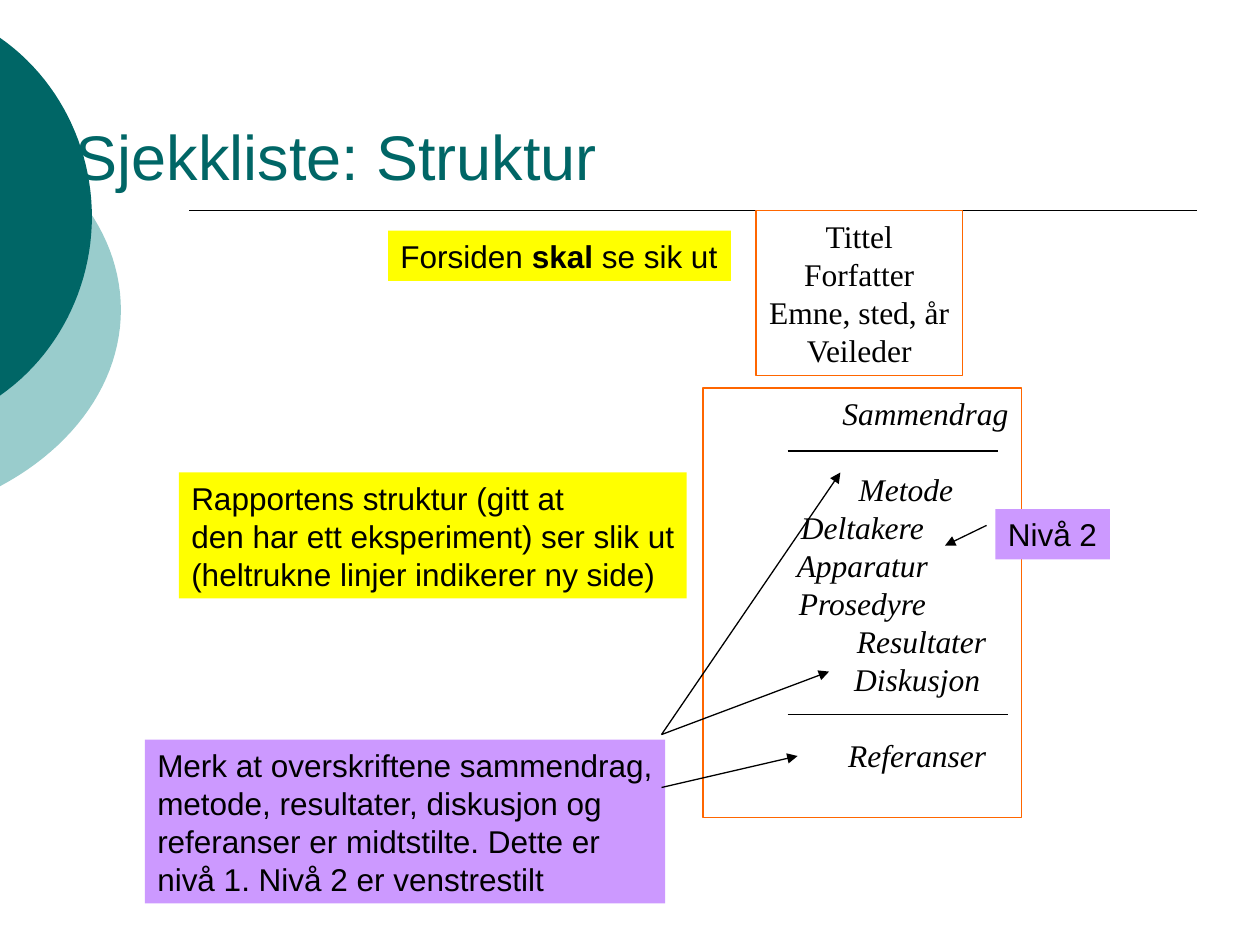
from lxml import etree
from pptx import Presentation
from pptx.dml.color import RGBColor
from pptx.enum.shapes import MSO_CONNECTOR, MSO_SHAPE
from pptx.enum.text import MSO_ANCHOR, PP_ALIGN
from pptx.oxml.ns import qn
from pptx.util import Inches, Pt

RECT = MSO_SHAPE.RECTANGLE
STRAIGHT = MSO_CONNECTOR.STRAIGHT
TOP, BOTTOM = MSO_ANCHOR.TOP, MSO_ANCHOR.BOTTOM
LEFT, CENTER = PP_ALIGN.LEFT, PP_ALIGN.CENTER

DARK, LIGHT, BLACK = "006666", "99CCCC", "000000"
ORANGE, YELLOW, PURPLE = "FF6600", "FFFF00", "CC99FF"
SANS, SERIF = "Arial", "Times New Roman"
LINE = Pt(21.7)


def color(value):
    return RGBColor.from_string(value)


class SlideBuilder:
    def __init__(self, slide):
        self.s = slide

    def run(self, p, text, font=SANS, size=18, fill=BLACK, bold=False, italic=False):
        r = p.add_run()
        r.text = text
        r.font.name, r.font.size = font, Pt(size)
        r.font.bold, r.font.italic = bold, italic
        r.font.color.rgb = color(fill)

    def title(self, text, x, y, w, h):
        sp = self.s.shapes.title
        sp.left, sp.top, sp.width, sp.height = map(Inches, (x, y, w, h))
        tf = sp.text_frame
        tf.vertical_anchor = BOTTOM
        p = tf.paragraphs[0]
        p.alignment = LEFT
        self.run(p, text, size=36, fill=DARK)

    def box(self, x, y, w, h, fill=None, line=None):
        sp = self.s.shapes.add_shape(RECT, *map(Inches, (x, y, w, h)))
        sp.shadow.inherit = False
        if fill:
            sp.fill.solid()
            sp.fill.fore_color.rgb = color(fill)
        else:
            sp.fill.background()
        if line:
            sp.line.color.rgb = color(line)
            sp.line.width = Pt(0.75)
        else:
            sp.line.fill.background()
        tf = sp.text_frame
        tf.word_wrap = False
        tf.vertical_anchor = TOP
        return tf

    def paragraph(self, tf, first, align=LEFT):
        p = tf.paragraphs[0] if first else tf.add_paragraph()
        p.alignment, p.line_spacing = align, LINE
        return p

    def lines(self, tf, rows, font=SANS, align=LEFT):
        """Each row is a list of (text, bold) runs."""
        for i, row in enumerate(rows):
            p = self.paragraph(tf, i == 0, align)
            for text, bold in row:
                self.run(p, text, font, bold=bold)

    def outline(self, tf, rows):
        """Centred headings, each moved right by its own indent."""
        tf.word_wrap = True
        tf.margin_left = tf.margin_right = 0
        for i, (text, indent, gap) in enumerate(rows):
            p = self.paragraph(tf, i == 0, CENTER)
            if gap:
                p.space_before = LINE
            pPr = p._p.get_or_add_pPr()
            pPr.set("marL", str(Inches(indent)))
            pPr.set("indent", "0")
            self.run(p, text, SERIF, italic=True)

    def line(self, start, end, width=0.75, arrow=False):
        c = self.s.shapes.add_connector(STRAIGHT, *map(Inches, (*start, *end)))
        c.line.color.rgb = color(BLACK)
        c.line.width = Pt(width)
        if arrow:
            ln = c.line._get_or_add_ln()
            etree.SubElement(ln, qn("a:tailEnd"), type="triangle")
        etree.SubElement(c._element.spPr, qn("a:effectLst"))

    def arc(self, fill, top, control1, control2, tip, steps=24):
        """Curve from the slide edge to its tip, mirrored below the tip."""
        upper = []
        for i in range(steps + 1):
            t = i / steps
            weights = ((1 - t) ** 3, 3 * t * (1 - t) ** 2, 3 * t * t * (1 - t), t ** 3)
            knots = (top, control1, control2, tip)
            upper.append(tuple(sum(w * k[a] for w, k in zip(weights, knots))
                               for a in (0, 1)))
        lower = [(x, 2 * tip[1] - y) for x, y in reversed(upper[:-1])]
        points = [(Inches(x), Inches(y)) for x, y in upper + lower]
        fb = self.s.shapes.build_freeform(*points[0])
        fb.add_line_segments(points[1:], close=True)
        sp = fb.convert_to_shape()
        sp.shadow.inherit = False
        sp.fill.solid()
        sp.fill.fore_color.rgb = color(fill)
        sp.line.fill.background()


def plain(*texts):
    return [[(text, False)] for text in texts]


def main():
    prs = Presentation()
    prs.slide_width, prs.slide_height = Inches(10), Inches(7.5)
    b = SlideBuilder(prs.slides.add_slide(prs.slide_layouts[5]))

    # Background decoration and title
    b.arc(LIGHT, (0, 1.06), (0.6, 1.38), (0.96, 1.9), (0.96, 2.46))
    b.arc(DARK, (0, 0.3), (0.46, 0.62), (0.73, 1.16), (0.73, 1.72))
    b.line((1.5, 1.67), (9.5, 1.67), width=1)
    b.title("Sjekkliste: Struktur", 0.5, 0.33, 9, 1.25)

    # Front page
    b.lines(b.box(6, 1.67, 1.64, 1.31, line=ORANGE),
            plain("Tittel", "Forfatter", "Emne, sted, år", "Veileder"),
            SERIF, CENTER)

    # Report: heading, indent, gap above
    b.outline(b.box(5.58, 3.08, 2.53, 3.41, line=ORANGE), [
        ("Sammendrag", 1, False),
        ("Metode", 0.69, True),
        ("Deltakere", 0, False),
        ("Apparatur", 0, False),
        ("Prosedyre", 0, False),
        ("Resultater", 0.94, False),
        ("Diskusjon", 0.87, False),
        ("Referanser", 0.87, True),
    ])

    # Page breaks
    b.line((6.25, 5.67), (8, 5.67))
    b.line((6.25, 3.58), (7.92, 3.58))

    # Notes
    b.lines(b.box(3.08, 1.83, 2.72, 0.4, YELLOW),
            [[("Forsiden ", False), ("skal", True), (" se sik ut", False)]])
    b.lines(b.box(1.42, 3.75, 4.03, 1, YELLOW),
            plain("Rapportens struktur (gitt at",
                  "den har ett eksperiment) ser slik ut",
                  "(heltrukne linjer indikerer ny side)"))
    b.lines(b.box(1.15, 5.87, 4.13, 1.3, PURPLE),
            plain("Merk at overskriftene sammendrag,",
                  "metode, resultater, diskusjon og",
                  "referanser er midtstilte. Dette er",
                  "nivå 1. Nivå 2 er venstrestilt"))
    b.lines(b.box(7.9, 4.04, 0.91, 0.4, PURPLE), plain("Nivå 2"))

    # Arrows from the notes to the headings
    for start, end in [((5.25, 5.83), (6.58, 5.33)),
                       ((5.25, 6.25), (6.33, 6)),
                       ((5.25, 5.83), (6.67, 3.75)),
                       ((7.83, 4.17), (7.5, 4.33))]:
        b.line(start, end, arrow=True)

    prs.save("out.pptx")


if __name__ == "__main__":
    main()
